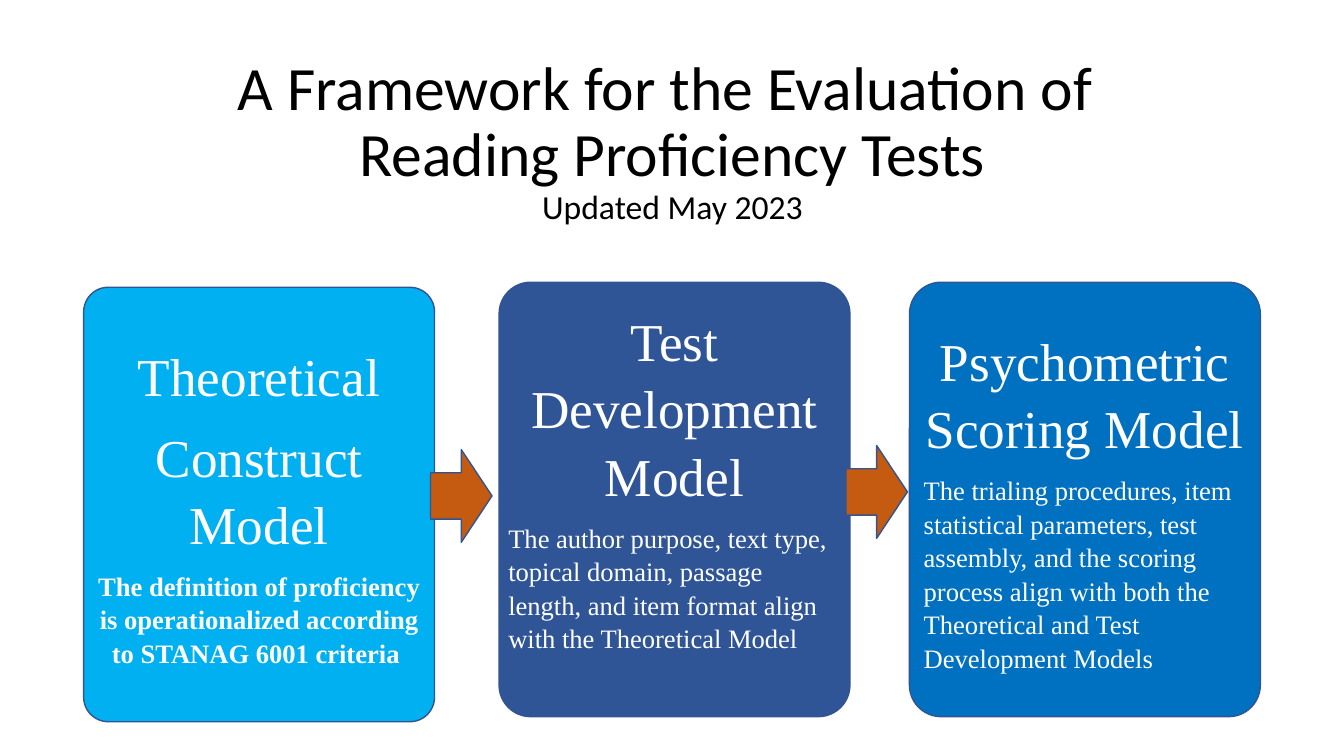
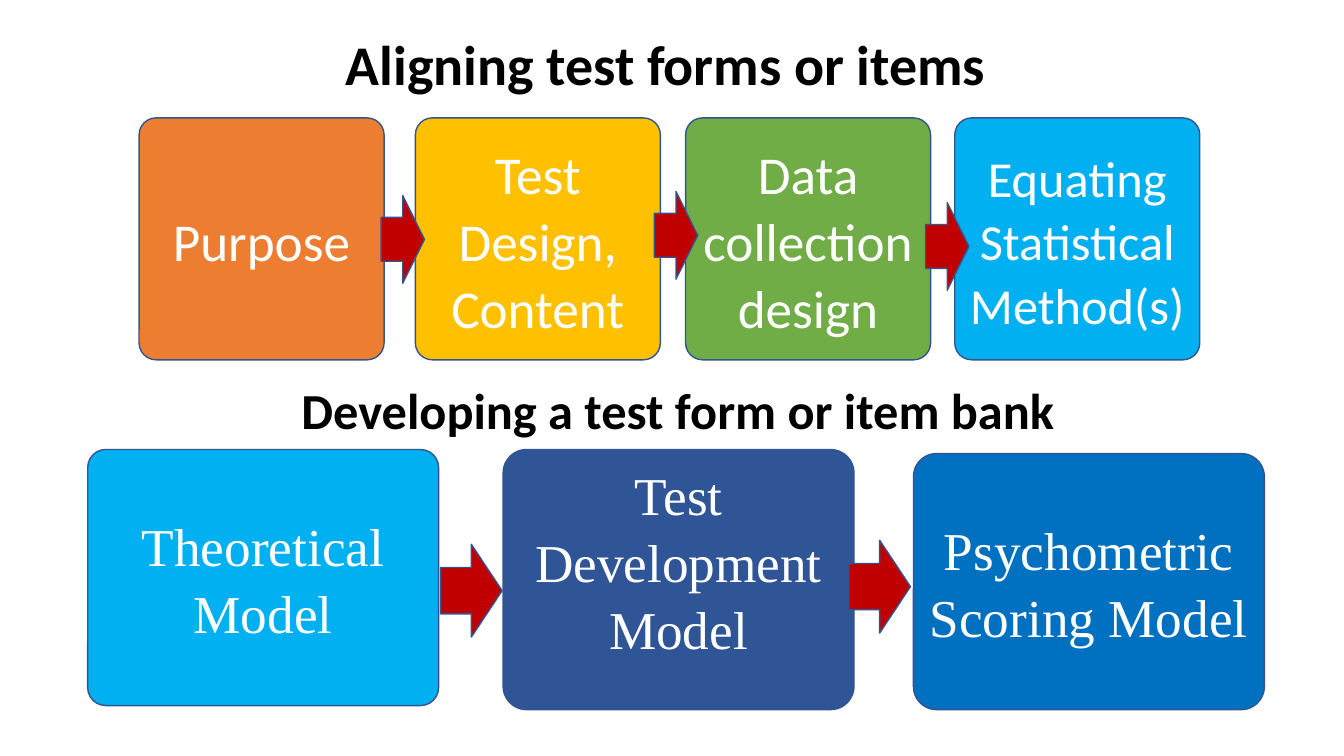
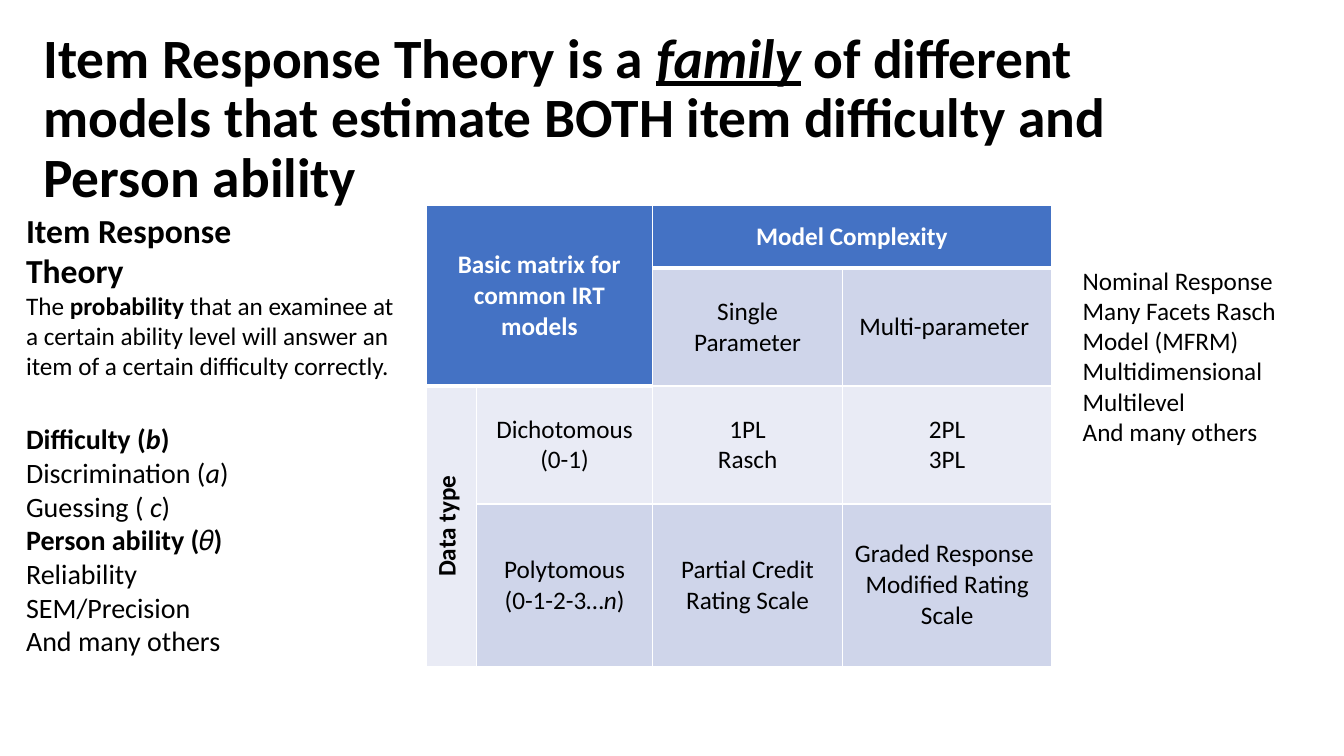
from dataclasses import dataclass
from itertools import accumulate

from lxml.etree import SubElement
from pptx import Presentation
from pptx.dml.color import RGBColor
from pptx.enum.shapes import MSO_SHAPE
from pptx.enum.text import MSO_ANCHOR, MSO_AUTO_SIZE, PP_ALIGN
from pptx.oxml.ns import qn
from pptx.util import Inches, Pt


@dataclass(frozen=True)
class Theme:
    # Fonts
    sans: str = "Calibri"
    serif: str = "Times New Roman"
    # Colours
    black: str = "000000"
    white: str = "FFFFFF"
    outline: str = "325491"
    sky: str = "00B0F0"
    navy: str = "2F5597"
    blue: str = "0070C0"
    orange: str = "ED7D31"
    gold: str = "FFC000"
    green: str = "70AD47"
    rust: str = "C55A11"
    red: str = "C00000"
    header: str = "4472C4"
    band_dark: str = "CFD5EA"
    band_light: str = "E9EBF5"
    # Type sizes in points
    title: float = 44
    heading: float = 40
    long_title: float = 39.6
    card: float = 38
    subheading: float = 36
    subtitle: float = 24
    note: float = 20
    detail: float = 19
    body: float = 18


THEME = Theme()


@dataclass
class Para:
    """One paragraph; content is a string or a list of (text, style) spans."""
    content: str | list
    size: float = THEME.body
    bold: bool = False
    color: str = THEME.black
    font: str = THEME.sans
    align: PP_ALIGN = PP_ALIGN.LEFT
    line: float = 1.0
    before: float = 0
    after: float = 0


def rgb(value):
    return RGBColor.from_string(value)


# Text
def write(frame, paras):
    for index, item in enumerate(paras):
        para = frame.paragraphs[0] if index == 0 else frame.add_paragraph()
        para.alignment, para.line_spacing = item.align, item.line
        para.space_before, para.space_after = Pt(item.before), Pt(item.after)
        para.font.name, para.font.size = item.font, Pt(item.size)
        para.font.bold = item.bold
        para.font.color.rgb = rgb(item.color)
        spans = [(item.content, "")] if isinstance(item.content, str) else item.content
        for text, style in spans:
            span = para.add_run()
            span.text = text
            if "b" in style:
                span.font.bold = True
            if "i" in style:
                span.font.italic = True
            if "u" in style:
                span.font.underline = True


def set_title(page, place, paras):
    title = page.shapes.title
    title.left, title.top, title.width, title.height = map(Inches, place)
    frame = title.text_frame
    frame.auto_size, frame.word_wrap = MSO_AUTO_SIZE.NONE, True
    frame.vertical_anchor = MSO_ANCHOR.MIDDLE
    write(frame, paras)


def add_text(page, place, paras):
    frame = page.shapes.add_textbox(*map(Inches, place)).text_frame
    frame.word_wrap, frame.auto_size = True, MSO_AUTO_SIZE.SHAPE_TO_FIT_TEXT
    write(frame, paras)


# Shapes
def add_block(page, kind, place, fill):
    block = page.shapes.add_shape(kind, *map(Inches, place))
    block.shadow.inherit = False
    block.fill.solid()
    block.fill.fore_color.rgb = rgb(fill)
    block.line.color.rgb = rgb(THEME.outline)
    block.line.width = Pt(1)
    return block


def card_para(text, size=THEME.card, font=THEME.serif, align=PP_ALIGN.CENTER, bold=False):
    return Para(text, size, bold, THEME.white, font, align, 1.05, after=9.5)


def add_card(page, place, fill, paras, radius=0.07, side=0.05, bottom=0.05):
    card = add_block(page, MSO_SHAPE.ROUNDED_RECTANGLE, place, fill)
    card.adjustments[0] = radius
    frame = card.text_frame
    frame.word_wrap, frame.vertical_anchor = True, MSO_ANCHOR.MIDDLE
    frame.margin_left = frame.margin_right = Inches(side)
    frame.margin_top, frame.margin_bottom = Inches(0.05), Inches(bottom)
    write(frame, paras)


def add_arrows(page, spots, size, fill):
    for spot in spots:
        add_block(page, MSO_SHAPE.RIGHT_ARROW, spot + size, fill)


def add_model_cards(page, left, tops, heights, texts):
    """The three models side by side: theory, test development, scoring."""
    looks = [
        (0, THEME.sky, 0.07, 0.05, 0.05),
        (4.12, THEME.navy, 0.09, 0, 0.44),
        (8.19, THEME.blue, 0.09, 0.05, 0.05),
    ]
    for look, top, height, paras in zip(looks, tops, heights, texts):
        offset, fill, radius, side, bottom = look
        add_card(page, (left + offset, top, 3.48, height), fill, paras, radius, side, bottom)


# Table
def set_borders(cell, top, bottom):
    props = cell._tc.get_or_add_tcPr()
    for tag, width in (("a:lnL", 1), ("a:lnR", 1), ("a:lnT", top), ("a:lnB", bottom)):
        line = SubElement(props, qn(tag), w=str(Pt(width)))
        fill = SubElement(line, qn("a:solidFill"))
        SubElement(fill, qn("a:srgbClr"), val=THEME.white)


def add_matrix(page, left, top, columns, rows, merges, fills, texts):
    """texts maps (row, column) to a list of paragraph contents."""
    place = map(Inches, (left, top, sum(columns), sum(rows)))
    table = page.shapes.add_table(len(rows), len(columns), *place).table
    table.first_row = table.horz_banding = False
    for column, width in zip(table.columns, columns):
        column.width = Inches(width)
    for row, height in zip(table.rows, rows):
        row.height = Inches(height)
    for first, last in merges:
        table.cell(*first).merge(table.cell(*last))

    def is_header(row, column):
        return row == 0 or (row == 1 and column < 2)

    for row in range(len(rows)):
        for column in range(len(columns)):
            cell = table.cell(row, column)
            header = is_header(row, column)
            above = row > 0 and is_header(row - 1, column)
            set_borders(cell, 3 if above else 1, 3 if header else 1)
            cell.fill.solid()
            cell.fill.fore_color.rgb = rgb(THEME.header if header else fills[row])
            side_label = column == 0 and not header
            if side_label:
                cell._tc.get_or_add_tcPr().set("vert", "vert270")
            else:
                cell.vertical_anchor = MSO_ANCHOR.MIDDLE
            color = THEME.white if header else THEME.black
            write(cell.text_frame, [
                Para(text, bold=header or side_label, color=color, align=PP_ALIGN.CENTER)
                for text in texts.get((row, column), [])
            ])


# Slides
def build_framework(page):
    center = PP_ALIGN.CENTER
    set_title(page, (0.92, 0.4, 11.5, 2.01), [
        Para("A Framework for the Evaluation of ", THEME.title, align=center, line=0.9),
        Para("Reading Proficiency Tests", THEME.title, align=center, line=0.9),
        Para("Updated May 2023", THEME.subtitle, align=center, line=0.9),
    ])
    left = PP_ALIGN.LEFT
    add_model_cards(page, 0.83, (2.85, 2.8, 2.8), (4.31,) * 3, [
        [card_para("Theoretical"), card_para("Construct Model"),
         card_para("The definition of proficiency is operationalized according "
                   "to STANAG 6001 criteria ", THEME.detail, bold=True)],
        [card_para("Test Development Model"),
         card_para("The author purpose, text type, topical domain, passage length, and "
                   "item format align with the Theoretical Model", THEME.detail, align=left)],
        [card_para("Psychometric Scoring Model"),
         card_para("The trialing procedures, item statistical parameters, test assembly, "
                   "and the scoring process align with both the Theoretical and Test "
                   "Development Models", THEME.detail, align=left)],
    ])
    add_arrows(page, [(4.27, 4.46), (8.39, 4.42)], (0.61, 0.92), THEME.rust)


def build_alignment(page):
    set_title(page, (2.17, 0.24, 8.99, 0.77), [
        Para("Aligning test forms or items ", THEME.heading, True, align=PP_ALIGN.CENTER)])
    # Upper row: aligning
    steps = [
        (1.38, THEME.orange, "Purpose", THEME.card),
        (4.12, THEME.gold, "Test Design, Content", THEME.card),
        (6.8, THEME.green, "Data collection design", THEME.card),
        (9.47, THEME.sky, "Equating Statistical Method(s)", THEME.subheading),
    ]
    for left, fill, text, size in steps:
        add_card(page, (left, 1.17, 2.43, 2.4), fill, [card_para(text, size, THEME.sans)])
    add_arrows(page, [(3.78, 1.94), (6.49, 1.9), (9.18, 2.01)], (0.43, 0.87), THEME.red)
    # Lower row: developing
    add_text(page, (2.23, 3.71, 8.99, 0.71), [
        Para("Developing a test form or item bank", THEME.subheading, True,
             align=PP_ALIGN.CENTER)])
    names = ("Theoretical Model", "Test Development Model", "Psychometric Scoring Model")
    add_model_cards(page, 0.87, (4.46, 4.46, 4.5), (2.54, 2.58, 2.54),
                    [[card_para(name)] for name in names])
    add_arrows(page, [(4.37, 5.4), (8.42, 5.36)], (0.61, 0.92), THEME.red)


def build_response_theory(page):
    set_title(page, (0.33, 0.34, 11.67, 1.7), [
        Para([("Item Response Theory is a ", ""), ("family", "iu"),
              (" of different models that estimate BOTH item difficulty and Person ability", "")],
             THEME.long_title, True, line=0.9)])
    # Model matrix
    add_matrix(
        page, 4.23, 2.04, (0.5, 1.74, 1.89, 2.07), (0.62, 1.17, 1.17, 1.61),
        merges=[((0, 0), (1, 1)), ((0, 2), (0, 3)), ((2, 0), (3, 0))],
        fills=(THEME.header, THEME.band_dark, THEME.band_light, THEME.band_dark),
        texts={
            (0, 0): ["Basic matrix for common IRT models"],
            (0, 2): ["Model Complexity"],
            (1, 2): ["Single Parameter"],
            (1, 3): ["Multi-parameter "],
            (2, 0): ["Data type"],
            (2, 1): ["Dichotomous", "(0-1)"],
            (2, 2): ["1PL", "Rasch"],
            (2, 3): ["2PL", "3PL"],
            (3, 1): ["Polytomous", [("(0-1-2-3…", ""), ("n", "i"), (")", "")]],
            (3, 2): ["Partial Credit", "Rating Scale"],
            (3, 3): ["Graded Response ", "Modified Rating Scale"],
        })
    # Further models
    others = ("Nominal Response", "Many Facets Rasch Model (MFRM)", "Multidimensional",
              "Multilevel", "And many others")
    add_text(page, (10.64, 2.58, 2.53, 1.92), [Para(name) for name in others])
    # Definition and terms
    add_text(page, (0.16, 2.03, 3.85, 4.58), [
        Para("Item Response", THEME.subtitle, True),
        Para("Theory", THEME.subtitle, True),
        Para([("The ", ""), ("probability", "b"),
              (" that an examinee at a certain ability level will answer an item of a "
               "certain difficulty correctly.", "")]),
        Para([("Difficulty (", ""), ("b", "i"), (")", "")], THEME.note, True, before=29.3),
        Para([("Discrimination (", ""), ("a", "i"), (")", "")], THEME.note),
        Para([("Guessing ( ", ""), ("c", "i"), (")", "")], THEME.note),
        Para("Person ability (𝜃)", THEME.note, True),
        *[Para(term, THEME.note) for term in ("Reliability", "SEM/Precision", "And many others")],
    ])


def main():
    deck = Presentation()
    deck.slide_width, deck.slide_height = Inches(13.33), Inches(7.5)
    title_only = deck.slide_layouts[5]
    for build in (build_framework, build_alignment, build_response_theory):
        build(deck.slides.add_slide(title_only))
    deck.save("out.pptx")


if __name__ == "__main__":
    main()
